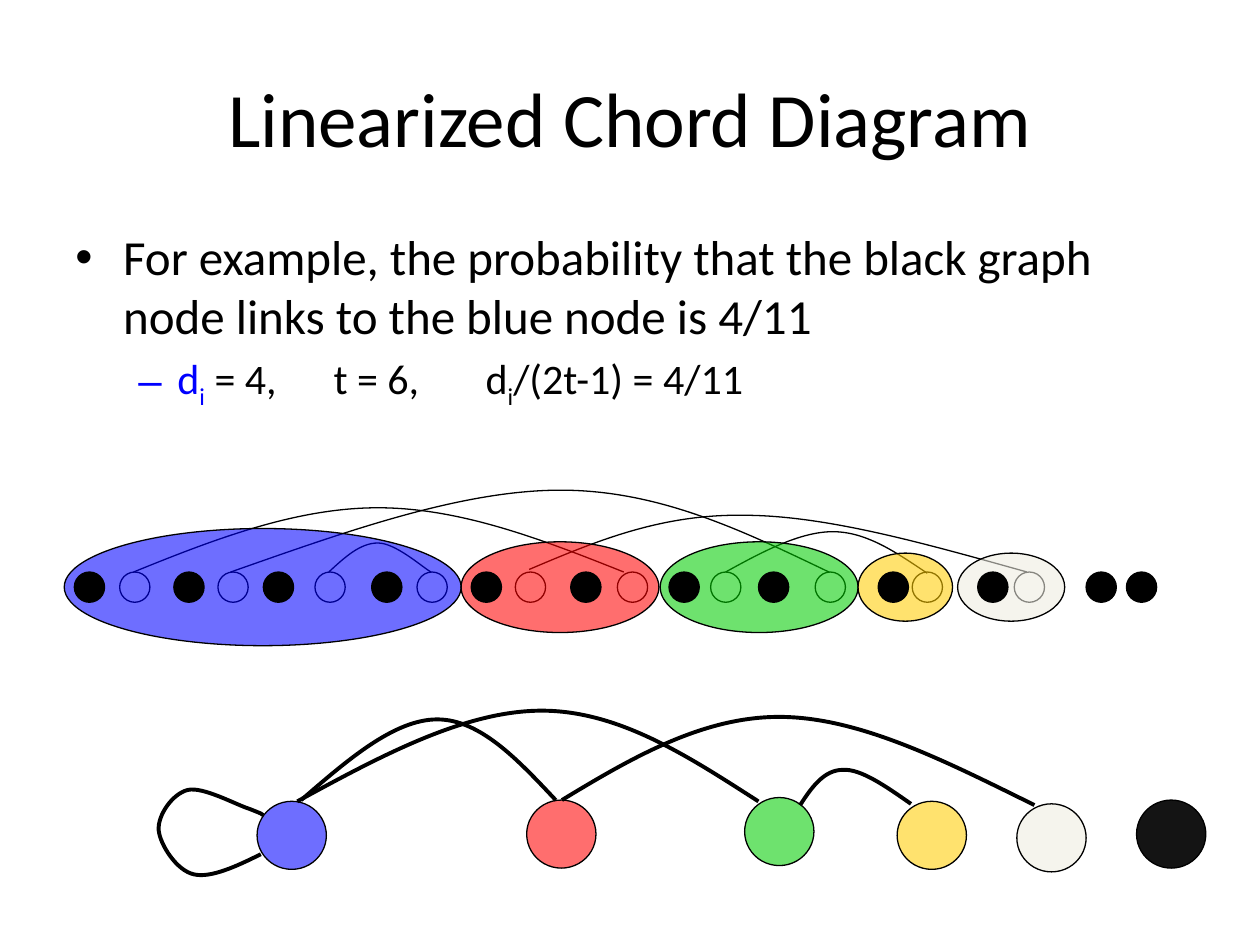
from typing import NamedTuple, Optional

from lxml.etree import SubElement
from pptx import Presentation
from pptx.dml.color import RGBColor
from pptx.enum.shapes import MSO_SHAPE
from pptx.enum.text import MSO_ANCHOR, PP_ALIGN
from pptx.oxml.ns import qn
from pptx.util import Emu, Inches, Pt

SLIDE_WIDTH, SLIDE_HEIGHT = Inches(10), Inches(7.5)
CELL = SLIDE_WIDTH // 10  # square grid: 10 columns by 7.5 rows

BLACK = RGBColor(0x00, 0x00, 0x00)
BLUE = RGBColor(0x00, 0x00, 0xFF)
RED = RGBColor(0xFF, 0x00, 0x00)
GREEN = RGBColor(0x00, 0xCC, 0x00)
YELLOW = RGBColor(0xFF, 0xCC, 0x00)
IVORY = RGBColor(0xEE, 0xEC, 0xE1)
FONT = "Calibri"
THIN, THICK = 0.75, 2.25
GROUP_OPACITY = 57

BEAD_SIZE = 0.24
BEAD_ROW = 4.54
NODE_WIDTH, NODE_HEIGHT = 0.55, 0.54
GROUP_MIDDLE = 4.66


class Group(NamedTuple):
    """A set of beads in the chord row and the graph node it merges into."""
    color: RGBColor
    left: float
    width: float
    height: float
    node_left: float
    node_top: float


class Piece(NamedTuple):
    text: str
    color: RGBColor = BLACK
    subscript: bool = False
    spacing: float = 0


GROUPS = [
    Group(BLUE, 0.51, 3.15, 0.93, 2.04, 6.36),
    Group(RED, 3.66, 1.57, 0.72, 4.18, 6.35),
    Group(GREEN, 5.24, 1.57, 0.72, 5.91, 6.33),
    Group(YELLOW, 6.81, 0.75, 0.54, 7.12, 6.36),
    Group(IVORY, 7.6, 0.85, 0.54, 8.07, 6.38),
]
HOLLOW_BEADS = [0.95, 1.73, 2.5, 3.31, 4.09, 4.9, 5.64, 6.47, 7.24, 8.05]
BLACK_BEADS = [0.59, 1.38, 2.09, 2.95, 3.74, 4.53, 5.31, 6.02, 6.97, 7.76, 8.62, 8.94]

# Each curve is a start point followed by three points per Bezier segment.
CHORDS = [
    [(1.06, 4.54), (1.7, 4.28), (2.35, 4.03), (3, 4.03),
     (3.65, 4.03), (4.3, 4.28), (4.95, 4.54)],
    [(2.61, 4.54), (2.74, 4.42), (2.86, 4.31), (3, 4.31),
     (3.14, 4.31), (3.35, 4.5), (3.42, 4.54)],
    [(1.83, 4.54), (2.74, 4.22), (3.66, 3.89), (4.45, 3.89),
     (5.24, 3.89), (5.91, 4.22), (6.58, 4.54)],
    [(4.2, 4.52), (4.72, 4.3), (5.24, 4.08), (5.9, 4.09),
     (6.56, 4.09), (7.36, 4.32), (8.15, 4.54)],
    [(5.76, 4.54), (6.05, 4.38), (6.35, 4.22), (6.61, 4.22),
     (6.88, 4.22), (7.12, 4.39), (7.36, 4.55)],
]
EDGES = [
    [(2.09, 6.47), (2.08, 6.46), (2.08, 6.46), (1.98, 6.42),
     (1.88, 6.39), (1.61, 6.24), (1.49, 6.27),
     (1.37, 6.3), (1.25, 6.47), (1.26, 6.59),
     (1.27, 6.7), (1.4, 6.91), (1.54, 6.94),
     (1.67, 6.97), (1.87, 6.88), (2.07, 6.78)],
    [(2.39, 6.35), (2.76, 6.03), (3.13, 5.71), (3.47, 5.71),
     (3.81, 5.71), (4.11, 6.03), (4.41, 6.35)],
    [(2.36, 6.36), (3.02, 6), (3.69, 5.64), (4.3, 5.64),
     (4.91, 5.64), (5.46, 6), (6.02, 6.36)],
    [(4.46, 6.35), (5.02, 6.01), (5.59, 5.68), (6.21, 5.69),
     (6.84, 5.7), (7.52, 6.05), (8.21, 6.39)],
    [(6.35, 6.39), (6.44, 6.25), (6.54, 6.11), (6.69, 6.11),
     (6.83, 6.1), (7.03, 6.24), (7.23, 6.38)],
]


def cells(count: float) -> Emu:
    return Emu(round(count * CELL))


def draw_ellipse(slide, left: float, top: float, width: float, height: float,
                 color: Optional[RGBColor] = None, opacity: int = 100) -> None:
    ellipse = slide.shapes.add_shape(
        MSO_SHAPE.OVAL, cells(left), cells(top), cells(width), cells(height))
    ellipse.shadow.inherit = False
    ellipse.line.color.rgb = BLACK
    ellipse.line.width = Pt(THIN)
    if color is None:
        ellipse.fill.background()
        return
    ellipse.fill.solid()
    ellipse.fill.fore_color.rgb = color
    if opacity < 100:
        fill_color = ellipse.element.spPr.find(qn("a:solidFill"))[0]
        SubElement(fill_color, qn("a:alpha")).set("val", str(opacity * 1000))


def draw_bead(slide, left: float, color: Optional[RGBColor] = None) -> None:
    draw_ellipse(slide, left, BEAD_ROW, BEAD_SIZE, BEAD_SIZE, color)


def draw_node(slide, left: float, top: float, color: RGBColor, opacity: int) -> None:
    draw_ellipse(slide, left, top, NODE_WIDTH, NODE_HEIGHT, color, opacity)


def draw_curve(slide, points: list[tuple[float, float]], weight: float) -> None:
    """Build a polyline through the control points, then make it Bezier."""
    start, *controls = [(cells(x), cells(y)) for x, y in points]
    builder = slide.shapes.build_freeform(*start)
    builder.add_line_segments(controls, close=False)
    curve = builder.convert_to_shape()
    curve.shadow.inherit = False
    curve.fill.background()
    curve.line.color.rgb = BLACK
    curve.line.width = Pt(weight)

    outline = next(curve.element.iter(qn("a:path")))
    segments = outline.findall(qn("a:lnTo"))
    for first in range(0, len(segments), 3):
        bezier = SubElement(outline, qn("a:cubicBezTo"))
        for segment in segments[first:first + 3]:
            bezier.append(segment[0])
            outline.remove(segment)


def write_bullet(paragraph, bullet: str, margin: float, hanging: float,
                 size: float, pieces: list[Piece]) -> None:
    paragraph.space_before = Pt(size * 0.2)
    properties = paragraph._p.get_or_add_pPr()
    properties.set("marL", str(cells(margin)))
    properties.set("indent", str(-cells(hanging)))
    SubElement(properties, qn("a:buFont")).set("typeface", "Arial")
    SubElement(properties, qn("a:buChar")).set("char", bullet)
    for piece in pieces:
        run = paragraph.add_run()
        run.text = piece.text
        run.font.name = FONT
        run.font.size = Pt(size)
        run.font.color.rgb = piece.color
        if piece.subscript:
            run.font._element.set("baseline", "-25000")
        if piece.spacing:
            run.font._element.set("spc", str(round(piece.spacing * 100)))


def write_title(slide) -> None:
    title = slide.shapes.title
    title.left, title.top = cells(0.5), cells(0.3)
    title.width, title.height = cells(9), cells(1.25)
    title.text_frame.text = "Linearized Chord Diagram"
    title.text_frame.vertical_anchor = MSO_ANCHOR.MIDDLE
    heading = title.text_frame.paragraphs[0]
    heading.alignment = PP_ALIGN.CENTER
    font = heading.runs[0].font
    font.name, font.size, font.color.rgb = FONT, Pt(44), BLACK


def write_example(slide) -> None:
    example = slide.shapes.add_textbox(
        cells(0.5), cells(1.75), cells(9), cells(4.95)).text_frame
    example.word_wrap = True
    write_bullet(example.paragraphs[0], "•", 0.38, 0.38, 28, [
        Piece("For example, the probability that the black graph "
              "node links to the blue node is 4/11")])
    formula = example.add_paragraph()
    formula.level = 1
    write_bullet(formula, "–", 0.81, 0.31, 24, [
        Piece("d", BLUE), Piece("i", BLUE, subscript=True),
        Piece(" = 4,"), Piece(" ", spacing=27),
        Piece("t = 6,"), Piece(" ", spacing=32.5),
        Piece("d"), Piece("i", subscript=True), Piece("/(2t-1) = 4/11")])


def main() -> None:
    presentation = Presentation()
    presentation.slide_width, presentation.slide_height = SLIDE_WIDTH, SLIDE_HEIGHT
    slide = presentation.slides.add_slide(presentation.slide_layouts[5])
    write_title(slide)
    write_example(slide)
    for left in HOLLOW_BEADS:
        draw_bead(slide, left)
    for chord in CHORDS:
        draw_curve(slide, chord, THIN)
    for group in GROUPS:
        draw_ellipse(slide, group.left, GROUP_MIDDLE - group.height / 2,
                     group.width, group.height, group.color, GROUP_OPACITY)
        draw_node(slide, group.node_left, group.node_top, group.color, GROUP_OPACITY)
    for edge in EDGES:
        draw_curve(slide, edge, THICK)
    draw_node(slide, 9.02, 6.35, BLACK, 92)
    for left in BLACK_BEADS:
        draw_bead(slide, left, BLACK)
    presentation.save("out.pptx")


if __name__ == "__main__":
    main()
